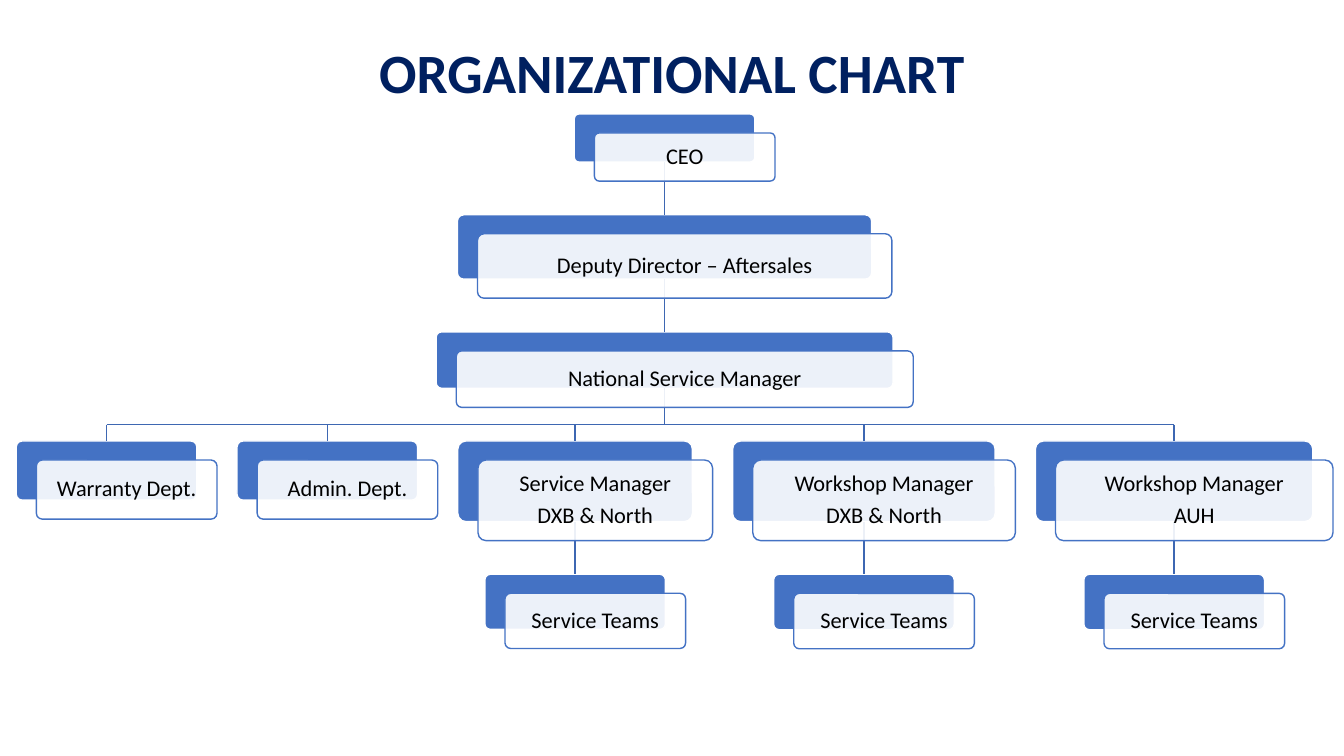
from dataclasses import dataclass

import lxml.etree
import pptx
import pptx.dml.color
import pptx.enum.shapes
import pptx.enum.text
import pptx.oxml.ns
import pptx.util

Pt = pptx.util.Pt
qn = pptx.oxml.ns.qn
FONT = "Calibri"
BLUE, LINK, NAVY, WHITE, BLACK = "4472C4", "3E67B2", "002060", "FFFFFF", "000000"
LEFT, TOP = 11.6, 81.4
SHIFT_X, SHIFT_Y = 14.4, 13.6
GAP_X, GAP_Y = 28.7, 37.6
BUS_UP = 11.6
SMALL = 129


@dataclass
class Post:
    text: str
    wide: float
    high: float
    team: float = 0
    x: float = 0
    y: float = 0
    back: object = None

    @property
    def mid(self) -> float:
        return self.x + self.wide / 2

    @property
    def base(self) -> float:
        return self.y + self.high


def color(code: str) -> pptx.dml.color.RGBColor:
    return pptx.dml.color.RGBColor.from_string(code)


def write(frame, text: str, *, size: float, ink: str, bold: bool = False,
          after: float = 0, inset: float = 6) -> None:
    frame.word_wrap = True
    frame.auto_size = pptx.enum.text.MSO_AUTO_SIZE.NONE
    frame.vertical_anchor = pptx.enum.text.MSO_ANCHOR.MIDDLE
    frame.margin_left = frame.margin_right = Pt(inset)
    frame.margin_top = frame.margin_bottom = Pt(inset)
    frame.text = text
    for par in frame.paragraphs:
        par.alignment = pptx.enum.text.PP_ALIGN.CENTER
        par.line_spacing = 0.9
        par.space_before = Pt(0)
        par.space_after = Pt(after)
        par.font.name = FONT
        par.font.size = Pt(size)
        par.font.bold = bold
        par.font.color.rgb = color(ink)


def panel(slide, x: float, y: float, wide: float, high: float, *,
          fill: str, edge: str, alpha: int = 100):
    kind = pptx.enum.shapes.MSO_SHAPE.ROUNDED_RECTANGLE
    shape = slide.shapes.add_shape(kind, Pt(x), Pt(y), Pt(wide), Pt(high))
    shape.adjustments[0] = 0.1
    shape.shadow.inherit = False
    shape.fill.solid()
    shape.fill.fore_color.rgb = color(fill)
    shape.line.color.rgb = color(edge)
    shape.line.width = Pt(1)
    if alpha < 100:
        tint = shape.fill._xPr.find(qn("a:solidFill"))[0]
        lxml.etree.SubElement(tint, qn("a:alpha")).set("val", str(alpha * 1000))
    return shape


def link(slide, x1: float, y1: float, x2: float, y2: float, *,
         start: Post | None = None, end: Post | None = None) -> None:
    kind = pptx.enum.shapes.MSO_CONNECTOR.STRAIGHT
    line = slide.shapes.add_connector(kind, Pt(x1), Pt(y1), Pt(x2), Pt(y2))
    line.line.color.rgb = color(LINK)
    line.line.width = Pt(1)
    lxml.etree.SubElement(line._element.spPr, qn("a:effectLst"))
    if start:
        line.begin_connect(start.back, 2)
    if end:
        line.end_connect(end.back, 0)


def main() -> None:
    deck = pptx.Presentation()
    deck.slide_width, deck.slide_height = Pt(960), Pt(540)
    slide = deck.slides.add_slide(deck.slide_layouts[5])

    title = slide.shapes.title
    title.left, title.top = Pt(66), Pt(28.8)
    title.width, title.height = Pt(828), Pt(51)
    write(title.text_frame, "ORGANIZATIONAL CHART", size=39.6, ink=NAVY,
          bold=True, inset=3.6)

    chain = [
        Post("CEO", SMALL, 34.4),
        Post("Deputy Director – Aftersales", 296, 46),
        Post("National Service Manager", 326.4, 40.4),
    ]
    units = [
        Post("Warranty Dept.", SMALL, 42.2),
        Post("Admin. Dept.", SMALL, 42.2),
        Post("Service Manager\nDXB & North", 167.6, 57.6, team=39.4),
        Post("Workshop Manager\nDXB & North", 187.6, 57.6, team=39.6),
        Post("Workshop Manager\nAUH", 198.2, 57.6, team=39.6),
    ]

    span = sum(unit.wide for unit in units) + GAP_X * (len(units) - 1)
    top = TOP
    for post in chain:
        post.x, post.y = LEFT + (span - post.wide) / 2, top
        top = post.base + GAP_Y
    left = LEFT
    pairs = list(zip(chain, chain[1:]))
    for unit in units:
        unit.x, unit.y = left, top
        left += unit.wide + GAP_X
        if unit.team:
            team = Post("Service Teams", SMALL, unit.team,
                        x=unit.mid - SMALL / 2, y=unit.base + GAP_Y)
            pairs.append((unit, team))

    posts = chain + units + [low for high, low in pairs if high in units]
    for post in posts:
        post.back = panel(slide, post.x, post.y, post.wide, post.high,
                          fill=BLUE, edge=WHITE)

    for high, low in pairs:
        link(slide, high.mid, high.base, low.mid, low.y, start=high, end=low)
    head = chain[-1]
    bus = top - BUS_UP
    link(slide, head.mid, head.base, head.mid, bus, start=head)
    link(slide, units[0].mid, bus, units[-1].mid, bus)
    for unit in units:
        link(slide, unit.mid, bus, unit.mid, unit.y, end=unit)

    for post in posts:
        front = panel(slide, post.x + SHIFT_X, post.y + SHIFT_Y, post.wide,
                      post.high, fill=WHITE, edge=BLUE, alpha=90)
        write(front.text_frame, post.text, size=16, ink=BLACK, after=5.6)

    deck.save("out.pptx")


if __name__ == "__main__":
    main()
